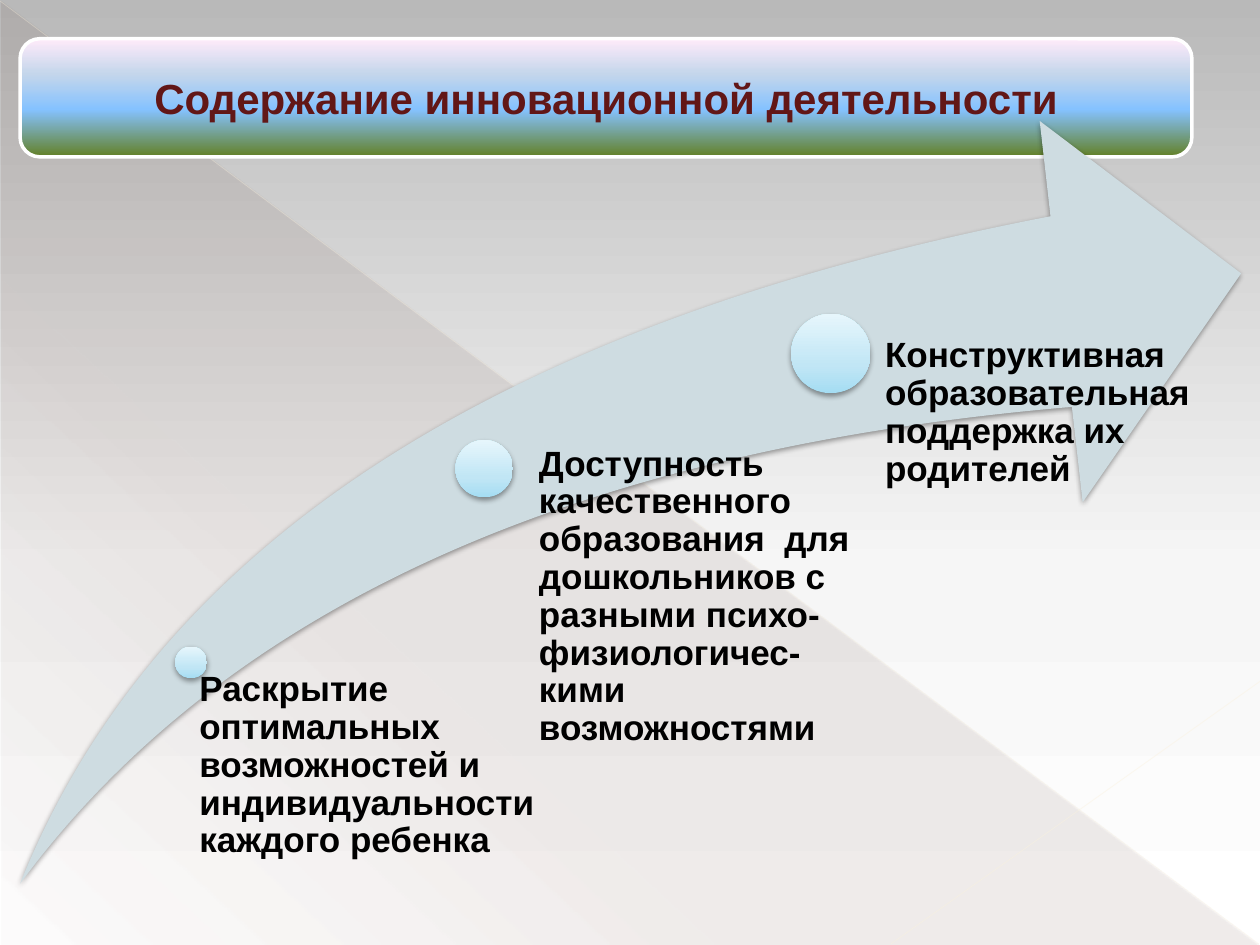
import pptx
import pptx.util
import pptx.dml.color
import pptx.enum.shapes
import pptx.enum.text
import pptx.oxml
import pptx.oxml.ns
import lxml.etree

SHAPE = pptx.enum.shapes.MSO_SHAPE
COLORS = {
    "bg_top": "B9B9B9", "bg_mid": "F6F6F6", "white": "FFFFFF", "brown": "4F271C",
    "line_down": "FAF0DC", "line_up": "FAF2DF",
    "green": "638026", "blue": "85C2FF", "haze": "C4D6EB", "pink": "FFEBFA",
    "title": "621717", "arrow": "CEDCE1", "text": "000000",
    "dot_low": "A5DDF3", "dot_mid": "C1E6F5", "dot_high": "E6F6FC",
}
TITLE = "Содержание инновационной деятельности"
STEPS = [
    ("Раскрытие оптимальных возможностей и индивидуальности каждого ребенка",
     (0.14, 0.71, 0.026), (0.133, 0.722, 0.31, 0.29)),
    ("Доступность качественного образования  для дошкольников с разными "
     "психо-физиологичес-кими возможностями",
     (0.38, 0.456, 0.047), (0.4, 0.426, 0.285, 0.544)),
    ("Конструктивная образовательная поддержка их родителей",
     (0.664, 0.305, 0.065), (0.674, 0.284, 0.301, 0.696)),
]


def rgb(name):
    """Return the named colour."""
    return pptx.dml.color.RGBColor.from_string(COLORS[name])


def part(box, x, y, w, h):
    """Return the part of a box given by shares of its size."""
    left, top, width, height = box
    return (int(left + x * width), int(top + y * height),
            int(w * width), int(h * height))


def add_alpha(color, percent):
    """Set the opacity of a colour element."""
    alpha = lxml.etree.SubElement(color, pptx.oxml.ns.qn("a:alpha"))
    alpha.set("val", str(percent * 1000))


def set_gradient(fill, root, stops, angle):
    """Give a fill the stops (position, colour, opacity) and a clockwise angle."""
    qn = pptx.oxml.ns.qn
    fill.gradient()
    grad = root.find(".//" + qn("a:gradFill"))
    gs_list = grad.find(qn("a:gsLst"))
    for gs in list(gs_list):
        gs_list.remove(gs)
    for position, name, opacity in stops:
        gs = lxml.etree.SubElement(gs_list, qn("a:gs"), pos=str(position * 1000))
        color = lxml.etree.SubElement(gs, qn("a:srgbClr"), val=COLORS[name])
        add_alpha(color, opacity)
    grad.find(qn("a:lin")).set("ang", str(angle * 60000))


def add_shape(s, kind, box):
    """Add a preset shape with neither shadow nor line."""
    sp = s.shapes.add_shape(kind, *box)
    sp.shadow.inherit = False
    sp.line.fill.background()
    return sp


def add_shadow(sp):
    """Give a shape a soft shadow below it."""
    qn = pptx.oxml.ns.qn
    effects = sp.element.spPr.find(qn("a:effectLst"))
    shadow = lxml.etree.SubElement(
        effects, qn("a:outerShdw"), blurRad=str(pptx.util.Pt(3.1)),
        dist=str(pptx.util.Pt(1.6)), dir="5400000", rotWithShape="0")
    add_alpha(lxml.etree.SubElement(shadow, qn("a:srgbClr"), val=COLORS["text"]), 38)


def add_line(s, box, ends, name, width, opacity):
    """Add a thin translucent line between two points given as shares."""
    qn = pptx.oxml.ns.qn
    x1, y1, x2, y2 = ends
    start, end = part(box, x1, y1, 0, 0), part(box, x2, y2, 0, 0)
    line = s.shapes.add_connector(
        pptx.enum.shapes.MSO_CONNECTOR.STRAIGHT, *start[:2], *end[:2])
    line.line.color.rgb = rgb(name)
    line.line.width = pptx.util.Pt(width)
    add_alpha(line.element.spPr.find(".//" + qn("a:srgbClr")), opacity)
    lxml.etree.SubElement(line.element.spPr, qn("a:effectLst"))


def format_text(sp, text, size, name, margin):
    """Fill a text shape with one bold paragraph and return it."""
    tf = sp.text_frame
    tf.text = text
    tf.word_wrap = True
    tf.auto_size = pptx.enum.text.MSO_AUTO_SIZE.NONE
    tf.margin_left = margin
    tf.margin_right = tf.margin_top = tf.margin_bottom = 0
    p = tf.paragraphs[0]
    font = p.runs[0].font
    font.name, font.size, font.bold = "Arial", pptx.util.Pt(size), True
    font.color.rgb = rgb(name)
    return p


def draw_backdrop(s, box):
    """Draw the grey gradient, the corner triangle and its two lines."""
    set_gradient(s.background.fill, s.element,
                 [(0, "bg_top", 100), (60, "bg_mid", 100), (100, "white", 100)], 90)
    sp = add_shape(s, SHAPE.RIGHT_TRIANGLE, part(box, 0.001, 0.002, 0.998, 0.998))
    set_gradient(sp.fill, sp.element,
                 [(0, "brown", 10), (70, "brown", 8), (100, "brown", 1)], 133)
    add_line(s, box, (0, 0.001, 0.999, 0.999), "line_down", 0.39, 35)
    add_line(s, box, (1, 0.721, 0.707, 0.999), "line_up", 0.47, 45)


def draw_title(s, box):
    """Draw the gradient bar with the title placeholder over it."""
    sp = add_shape(s, SHAPE.ROUNDED_RECTANGLE, box)
    set_gradient(sp.fill, sp.element.spPr,
                 [(0, "green", 100), (40, "blue", 100),
                  (70, "haze", 100), (100, "pink", 100)], 270)
    sp.line.color.rgb = rgb("white")
    sp.line.width = pptx.util.Pt(2)
    title = s.shapes.title
    title.left, title.top, title.width, title.height = part(
        box, 0.015, 0.05, 0.97, 0.9)
    p = format_text(title, TITLE, 24, "title", pptx.util.Inches(0.25))
    p.alignment = pptx.enum.text.PP_ALIGN.CENTER
    title.text_frame.margin_right = pptx.util.Inches(0.25)
    title.text_frame.vertical_anchor = pptx.enum.text.MSO_ANCHOR.MIDDLE
    title.element.getparent().append(title.element)


def draw_step(s, box, text, dot, label):
    """Draw one growing dot and the label beside it."""
    x, y, share = dot
    left, top = part(box, x, y, 0, 0)[:2]
    size = int(share * box[2])
    sp = add_shape(s, SHAPE.OVAL, (left - size // 2, top - size // 2, size, size))
    set_gradient(sp.fill, sp.element,
                 [(0, "dot_low", 100), (35, "dot_mid", 100), (100, "dot_high", 100)], 270)
    add_shadow(sp)
    tb = s.shapes.add_textbox(*part(box, *label))
    p = format_text(tb, text, 20, "text", int(0.53 * size))
    p.alignment = pptx.enum.text.PP_ALIGN.LEFT
    p.line_spacing = 0.9


def draw_arrow(s, box):
    """Draw the rising arrow and its steps."""
    sp = add_shape(s, SHAPE.SWOOSH_ARROW, box)
    sp.adjustments[0] = sp.adjustments[1] = 0.25
    sp.fill.solid()
    sp.fill.fore_color.rgb = rgb("arrow")
    add_shadow(sp)
    for text, dot, label in STEPS:
        draw_step(s, box, text, dot, label)


def main():
    """Build the slide and save it."""
    prs = pptx.Presentation()
    prs.slide_width = pptx.util.Inches(10)
    prs.slide_height = pptx.util.Inches(7.5)
    s = prs.slides.add_slide(prs.slide_layouts[5])
    page = (0, 0, prs.slide_width, prs.slide_height)
    draw_backdrop(s, page)
    draw_title(s, part(page, 0.016, 0.041, 0.93, 0.125))
    draw_arrow(s, part(page, 0.016, 0.128, 0.969, 0.807))
    prs.save("out.pptx")


if __name__ == "__main__":
    main()
